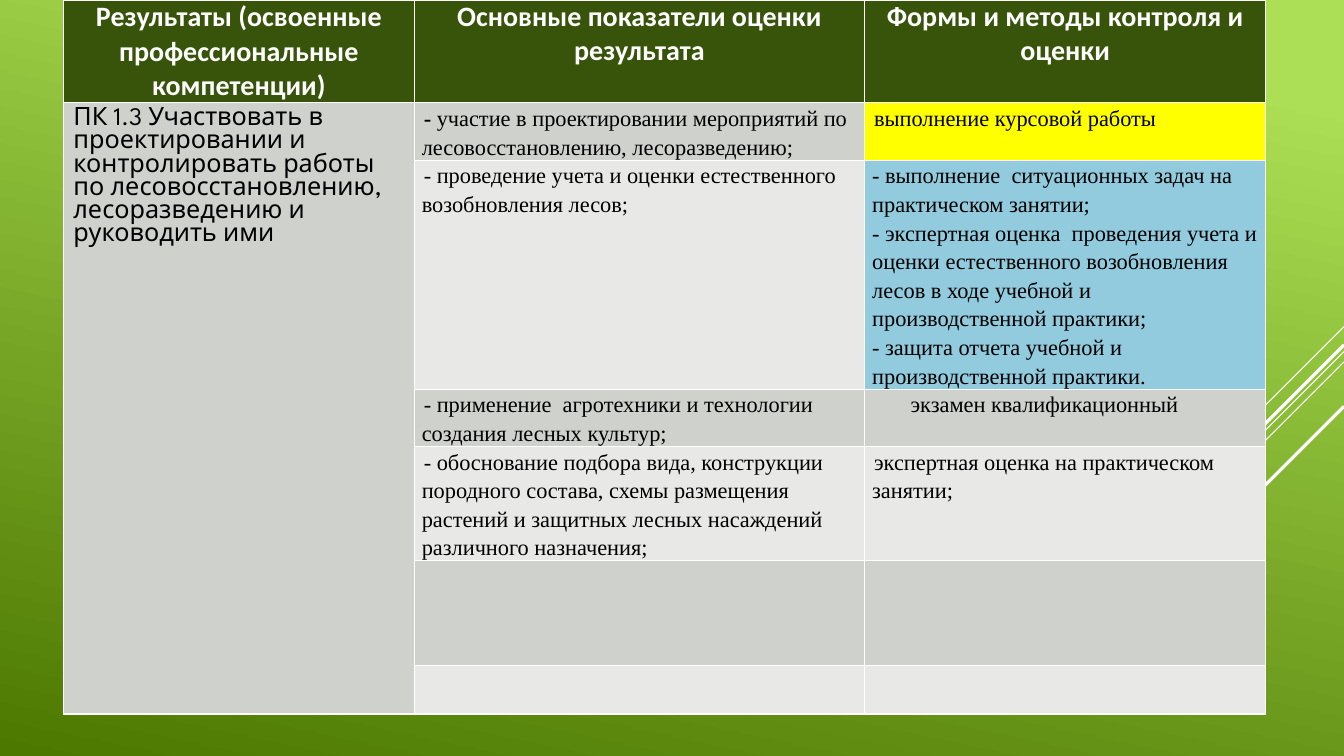
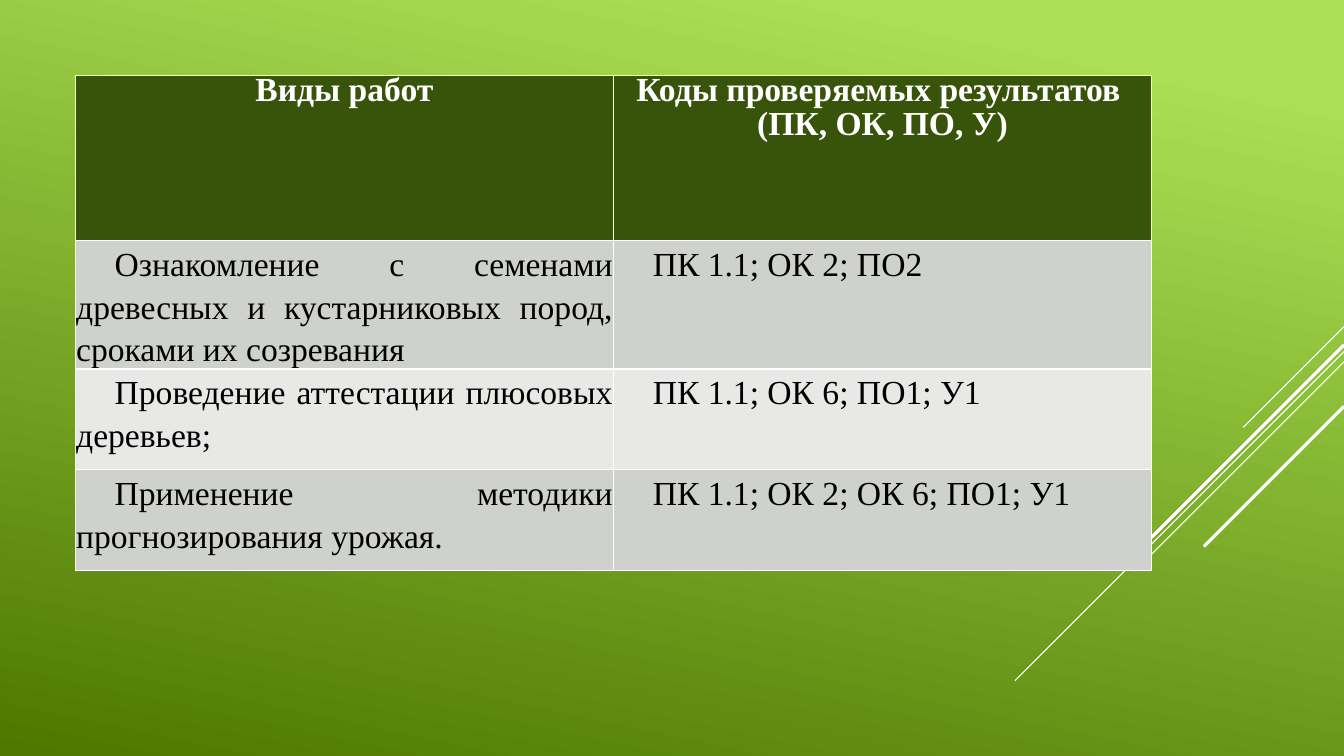
from lxml.etree import SubElement
from pptx import Presentation
from pptx.dml.color import RGBColor
from pptx.enum.text import MSO_ANCHOR, PP_ALIGN
from pptx.enum.shapes import MSO_CONNECTOR
from pptx.oxml.ns import qn
from pptx.util import Cm, Pt

WHITE = "FFFFFF"
BLACK = "000000"
HEADER = "38540A"
BANDS = ["CED1CC", "E8E9E7"]
YELLOW = "FFFF00"
BLUE = "91CBDD"
SERIF = "Times New Roman"


def color(value):
    return RGBColor.from_string(value)


def write_cell(cell, text, fill, font, size, ink=BLACK, align=None,
               indent=0, spacing=1.15, after=0, margin=0.19):
    cell.fill.solid()
    cell.fill.fore_color.rgb = color(fill)
    cell.margin_left = cell.margin_right = Cm(margin)
    cell.margin_top = cell.margin_bottom = 0
    cell.text = text
    for para in cell.text_frame.paragraphs:
        para.alignment = align
        para.line_spacing = spacing
        para.space_after = Pt(after)
        para.font.name = font
        para.font.size = Pt(size)
        para.font.bold = ink == WHITE
        para.font.color.rgb = color(ink)
        para._p.get_or_add_pPr().set("indent", str(Cm(indent)))


deck = Presentation()
deck.slide_width = Cm(33.87)
deck.slide_height = Cm(19.05)
master = deck.slide_master

backdrop = master.background.fill
backdrop.gradient()
backdrop.gradient_angle = 258
for stop, (position, shade) in zip(backdrop.gradient_stops, [(0.1, "ACDF55"), (1, "4C7800")]):
    stop.position = position
    stop.color.rgb = color(shade)

layouts = [
    (1.6, 0, [8.84, 11.35, 10.11], [2.36, 1.4, 5.74, 1.4, 2.84, 2.64, 1.22]),
    (1.9, 1.9, [13.56, 13.56], [4.17, 2.87, 2.54, 2.54]),
]
pages = []
tables = []
for left, top, widths, heights in layouts:
    page = deck.slides.add_slide(deck.slide_layouts[6])
    frame = page.shapes.add_table(len(heights), len(widths), Cm(left), Cm(top),
                                  Cm(sum(widths)), Cm(sum(heights)))
    for column, width in zip(frame.table.columns, widths):
        column.width = Cm(width)
    for row, height in zip(frame.table.rows, heights):
        row.height = Cm(height)
    pages.append(page)
    tables.append(frame.table)

diagonals = [(8.23, 2.54, 0.75), (8.86, 8.29, 0.75), (9.12, 5.27, 0.75),
             (8.69, 4.85, 2.25), (10.24, 3.53, 2.25)]
for number, (top, reach, weight) in enumerate(diagonals):
    line = pages[0].shapes.add_connector(MSO_CONNECTOR.STRAIGHT, Cm(33.87), Cm(top),
                                         Cm(33.87 - reach), Cm(top + reach))
    line.line.color.rgb = color(WHITE)
    line.line.width = Pt(weight)
    SubElement(line.element.spPr, qn("a:effectLst"))
    line.element.nvCxnSpPr.cNvPr.id = 20 + number
    master.shapes.element.append(line.element)

results, works = tables

result_headers = [
    "Результаты (освоенные профессиональные компетенции)",
    "Основные показатели оценки результата",
    "Формы и методы контроля и оценки",
]
for index, text in enumerate(result_headers):
    write_cell(results.cell(0, index), text, HEADER, "Calibri", 20, WHITE,
               PP_ALIGN.CENTER, spacing=None)
results.cell(0, 0).vertical_anchor = MSO_ANCHOR.MIDDLE

competence = results.cell(1, 0)
competence.merge(results.cell(6, 0))
write_cell(competence,
           "ПК 1.3 Участвовать в проектировании и контролировать работы "
           "по лесовосстановлению, лесоразведению и руководить ими",
           BANDS[0], "League Spartan", 18, spacing=None, margin=0.25)
competence.margin_top = competence.margin_bottom = Cm(0.13)

result_rows = [
    ("участие в проектировании мероприятий по  лесовосстановлению, лесоразведению;",
     "выполнение курсовой работы", YELLOW, 0.05),
    ("- проведение учета и оценки естественного возобновления лесов;",
     "- выполнение  ситуационных задач на практическом занятии;\n"
     "- экспертная оценка  проведения учета и оценки естественного возобновления лесов "
     "в ходе учебной и производственной практики;\n"
     "- защита отчета учебной и производственной практики.", BLUE, 0),
    ("- применение  агротехники и технологии создания лесных культур;",
     "экзамен квалификационный", None, 0.97),
    ("- обоснование подбора вида, конструкции породного состава, схемы размещения "
     "растений и защитных лесных насаждений различного назначения;",
     "экспертная оценка на практическом занятии;", None, 0.05),
    ("", "", None, 0),
    ("", "", None, 0),
]
for index, (indicator, method, highlight, indent) in enumerate(result_rows):
    band = BANDS[index % 2]
    write_cell(results.cell(index + 1, 1), indicator, band, SERIF, 16, indent=0.05)
    write_cell(results.cell(index + 1, 2), method, highlight or band, SERIF, 16, indent=indent)

para = results.cell(1, 1).text_frame.paragraphs[0]
span = para.runs[0]
span.text = "- "
span.font.bold = True
para.add_run().text = result_rows[0][0]

work_headers = ["Виды работ", "Коды проверяемых результатов \n(ПК, ОК, ПО, У)"]
for index, text in enumerate(work_headers):
    write_cell(works.cell(0, index), text, HEADER, SERIF, 24, WHITE,
               PP_ALIGN.CENTER, spacing=Pt(24), margin=0.02)

work_rows = [
    ("Ознакомление с семенами древесных и кустарниковых пород, сроками их созревания",
     "ПК 1.1; ОК 2; ПО2"),
    ("Проведение аттестации плюсовых деревьев;", "ПК 1.1; ОК 6; ПО1; У1"),
    ("Применение методики прогнозирования урожая.", "ПК 1.1; ОК 2; ОК 6; ПО1; У1"),
]
for index, (work, codes) in enumerate(work_rows):
    band = BANDS[index % 2]
    write_cell(works.cell(index + 1, 0), work, band, SERIF, 24,
               align=PP_ALIGN.JUSTIFY, indent=0.97, margin=0.02)
    write_cell(works.cell(index + 1, 1), codes, band, SERIF, 24,
               indent=0.97, after=10, margin=0.02)

deck.save("out.pptx")
